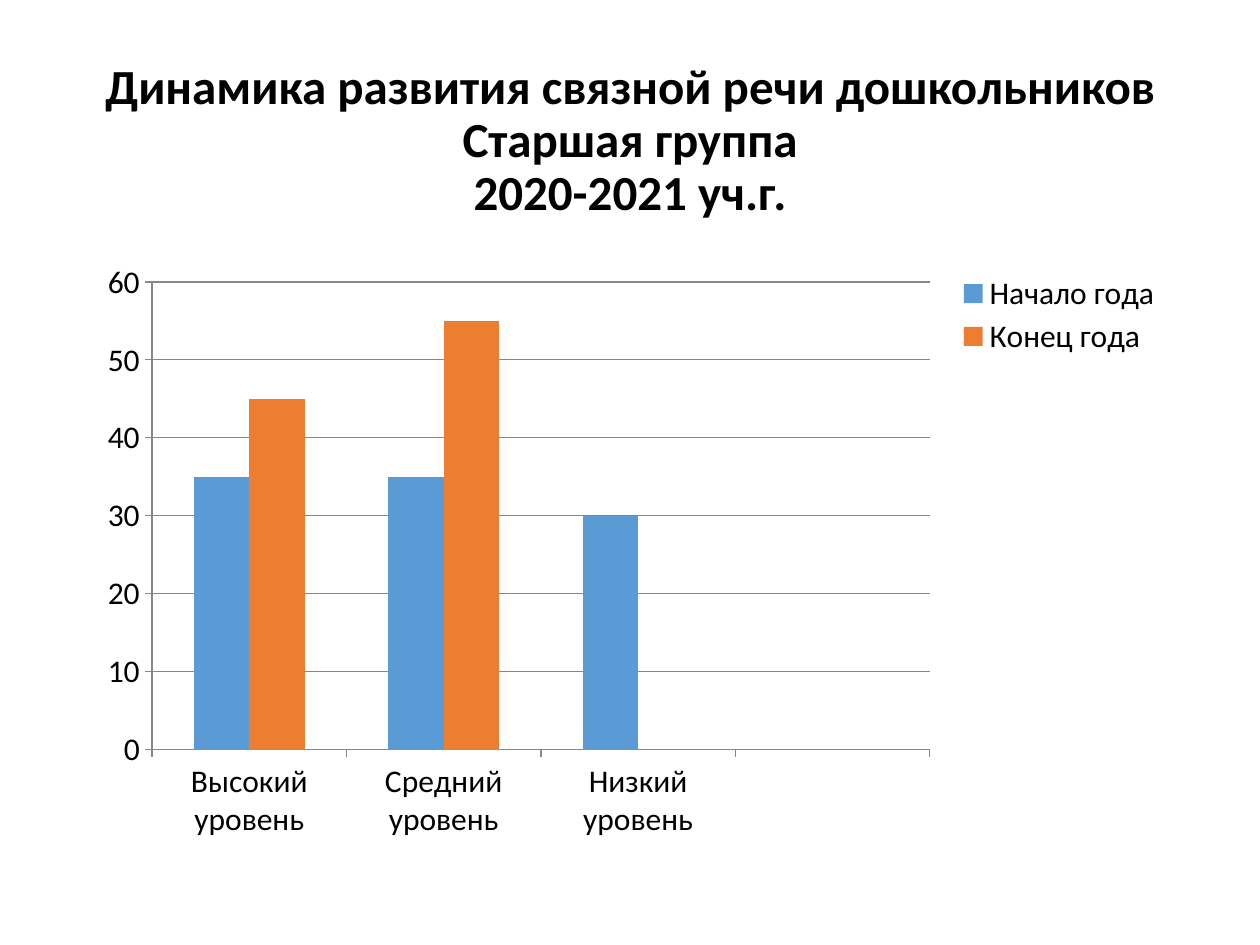
from lxml import etree
from pptx import Presentation
from pptx.chart.data import CategoryChartData
from pptx.dml.color import RGBColor
from pptx.enum.chart import XL_CHART_TYPE, XL_LEGEND_POSITION, XL_TICK_MARK
from pptx.enum.text import MSO_ANCHOR, MSO_AUTO_SIZE, PP_ALIGN
from pptx.oxml.ns import qn
from pptx.util import Inches, Pt

CLUSTERED = XL_CHART_TYPE.COLUMN_CLUSTERED
LEGEND_RIGHT = XL_LEGEND_POSITION.RIGHT
TICK_OUTSIDE = XL_TICK_MARK.OUTSIDE
TITLE_ONLY = 5


def color(hex_string):
    return RGBColor.from_string(hex_string)


def manual_layout(index, parent, target=None, **fractions):
    """Place a chart part by fractions x, y, w, h of the chart area."""
    for existing in parent.findall(qn("c:layout")):
        parent.remove(existing)
    layout = etree.Element(qn("c:layout"))
    manual = etree.SubElement(layout, qn("c:manualLayout"))
    settings = {"layoutTarget": target} if target else {}
    settings.update(xMode="edge", yMode="edge", **fractions)
    for name, value in settings.items():
        etree.SubElement(manual, qn(f"c:{name}")).set("val", str(value))
    parent.insert(index, layout)


class SlideBuilder:
    font_name = "Calibri"
    text_color = "000000"
    line_color = "878787"

    def __init__(self, slide):
        self.slide = slide

    def style_font(self, font, size, bold=False):
        font.name = self.font_name
        font.size = Pt(size)
        font.bold = bold
        font.color.rgb = color(self.text_color)

    def title(self, lines, left, top, width, height):
        shape = self.slide.shapes.title
        shape.left, shape.top = Inches(left), Inches(top)
        shape.width, shape.height = Inches(width), Inches(height)
        frame = shape.text_frame
        frame.text = "\v".join(lines)
        frame.word_wrap = True
        frame.auto_size = MSO_AUTO_SIZE.NONE
        frame.vertical_anchor = MSO_ANCHOR.MIDDLE
        paragraph = frame.paragraphs[0]
        paragraph.alignment = PP_ALIGN.CENTER
        paragraph.line_spacing = 0.9
        self.style_font(paragraph.font, 28, bold=True)

    def column_chart(self, categories, series, left, top, width, height):
        data = CategoryChartData()
        data.categories = categories
        for name, values, _ in series:
            data.add_series(name, values)
        chart = self.slide.shapes.add_chart(
            CLUSTERED, Inches(left), Inches(top), Inches(width), Inches(height), data
        ).chart
        chart.has_title = False
        self.style_font(chart.font, 18)

        plot = chart.plots[0]
        plot.gap_width = 150
        plot.overlap = 0
        plot.vary_by_categories = False
        for column, (_, _, fill) in zip(plot.series, series):
            column.invert_if_negative = False
            column.format.fill.solid()
            column.format.fill.fore_color.rgb = color(fill)

        value_axis = chart.value_axis
        value_axis.minimum_scale, value_axis.maximum_scale = 0, 60
        value_axis.major_unit = 10
        value_axis.has_major_gridlines = True
        for axis in (chart.category_axis, value_axis):
            axis.major_tick_mark = TICK_OUTSIDE
        for part in (chart.category_axis, value_axis, value_axis.major_gridlines):
            part.format.line.color.rgb = color(self.line_color)
            part.format.line.width = Pt(0.75)

        chart.has_legend = True
        legend = chart.legend
        legend.position = LEGEND_RIGHT
        legend.include_in_layout = False
        plot_area = chart.element.find(".//" + qn("c:plotArea"))
        legend_element = chart.element.find(".//" + qn("c:legend"))
        manual_layout(0, plot_area, "inner", x=0.06, y=0.05, w=0.716, h=0.78)
        manual_layout(1, legend_element, x=0.8, y=0.03, w=0.19, h=0.15)


def main():
    presentation = Presentation()
    presentation.slide_width, presentation.slide_height = Inches(10), Inches(7.5)
    slide = presentation.slides.add_slide(presentation.slide_layouts[TITLE_ONLY])
    builder = SlideBuilder(slide)
    builder.title(
        ["Динамика развития связной речи дошкольников", "Старшая группа", "2020-2021 уч.г."],
        0.69, 0.4, 8.62, 1.45,
    )
    builder.column_chart(
        ["Высокий уровень", "Средний уровень", "Низкий уровень", ""],
        [
            ("Начало года", (35, 35, 30, None), "5B9BD5"),
            ("Конец года", (45, 55, 0, None), "ED7D31"),
        ],
        0.69, 2, 8.62, 4.76,
    )
    presentation.save("out.pptx")


if __name__ == "__main__":
    main()
